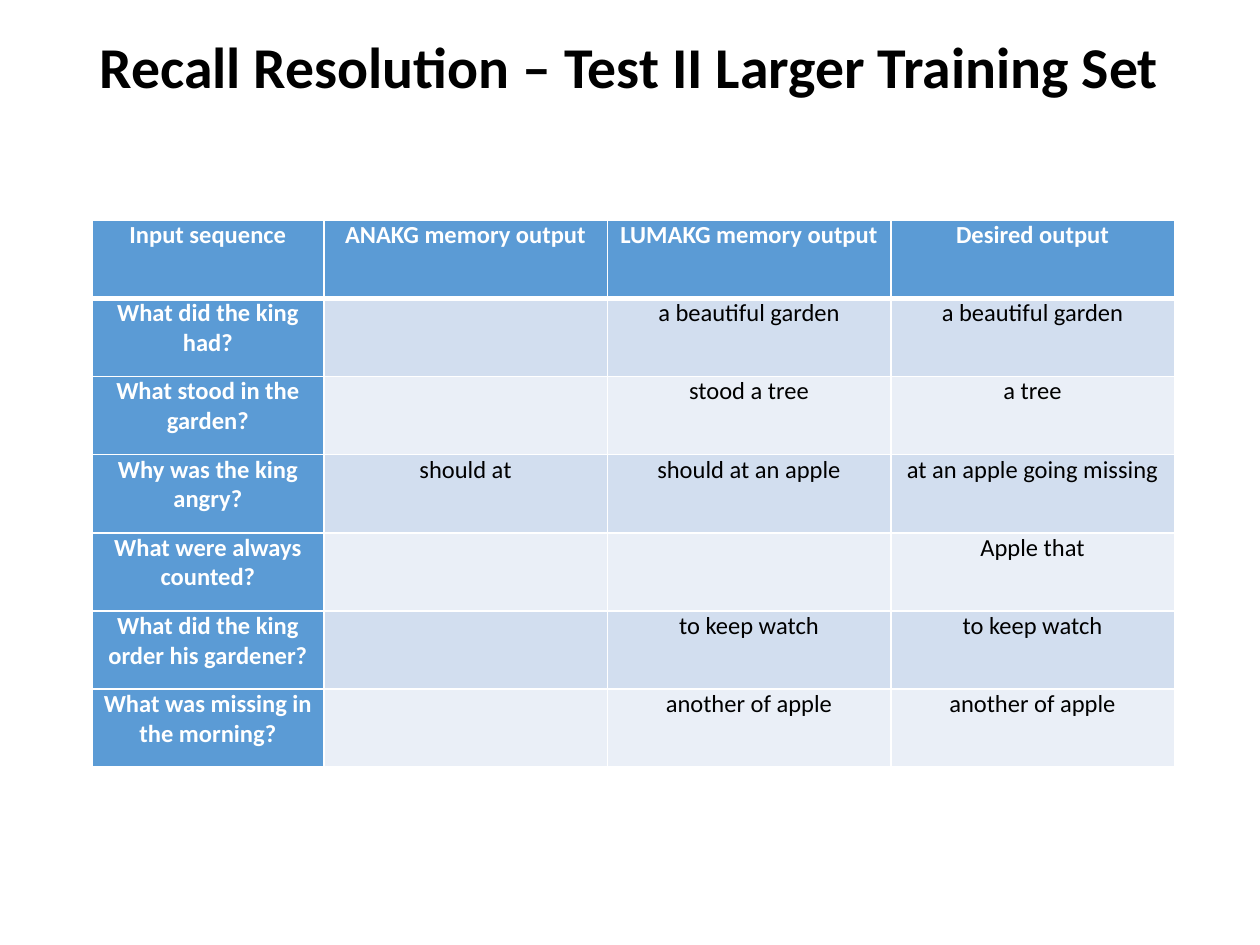
from dataclasses import dataclass

from lxml import etree
from pptx import Presentation
from pptx import util as u
from pptx.dml.color import RGBColor
from pptx.enum import text
from pptx.oxml.ns import qn


@dataclass(frozen=True)
class Theme:
    font: str = "Calibri"
    title_size: float = 33
    cell_size: float = 14
    ink: str = "000000"
    white: str = "FFFFFF"
    head: str = "5B9BD5"
    bands: tuple[str, str] = ("D2DEEF", "EAEFF7")
    line: float = 1
    head_line: float = 3


@dataclass(frozen=True)
class Recall:
    question: str
    anakg: str
    lumakg: str
    desired: str

    def cells(self) -> tuple[str, ...]:
        return self.question, self.anakg, self.lumakg, self.desired


THEME = Theme()
COLUMN_WIDTHS = (1.84, 2.25, 2.25, 2.25)
ROW_HEIGHT = 0.62
ROWS = (
    Recall("Input sequence", "ANAKG memory output", "LUMAKG memory output", "Desired output"),
    Recall("What did the king had?", "", "a beautiful garden", "a beautiful garden"),
    Recall("What stood in the garden?", "", "stood a tree", "a tree"),
    Recall("Why was the king angry?", "should at", "should at an apple",
           "at an apple going missing"),
    Recall("What were always counted?", "", "", "Apple that"),
    Recall("What did the king order his gardener?", "", "to keep watch", "to keep watch"),
    Recall("What was missing in the morning?", "", "another of apple", "another of apple"),
)


def write(tf, words: str, *, size: float, color: str, bold: bool = False,
          align=text.PP_ALIGN.LEFT, spacing: float = 1.0) -> None:
    """Put one formatted paragraph in a text frame."""
    p = tf.paragraphs[0]
    p.alignment, p.line_spacing = align, spacing
    r = p.add_run()
    r.text = words
    r.font.name, r.font.size, r.font.bold = THEME.font, u.Pt(size), bold
    r.font.color.rgb = RGBColor.from_string(color)


def add_borders(cell, top: float, bottom: float) -> None:
    """Draw white cell borders; they must precede the fill in the XML."""
    tc_pr = cell._tc.get_or_add_tcPr()
    widths = {"lnL": THEME.line, "lnR": THEME.line, "lnT": top, "lnB": bottom}
    for tag, width in widths.items():
        ln = etree.SubElement(tc_pr, qn(f"a:{tag}"), w=str(u.Pt(width)))
        fill = etree.SubElement(ln, qn("a:solidFill"))
        etree.SubElement(fill, qn("a:srgbClr"), val=THEME.white)


def draw_cell(cell, words: str, row: int, col: int) -> None:
    is_head = row == 0 or col == 0
    add_borders(cell,
                top=THEME.head_line if row == 1 else THEME.line,
                bottom=THEME.head_line if row == 0 else THEME.line)
    cell.fill.solid()
    fill = THEME.head if is_head else THEME.bands[(row - 1) % 2]
    cell.fill.fore_color.rgb = RGBColor.from_string(fill)
    cell.margin_left = cell.margin_right = u.Inches(0.07)
    cell.margin_top = cell.margin_bottom = 0
    if words:
        write(cell.text_frame, words, size=THEME.cell_size, bold=is_head,
              color=THEME.white if is_head else THEME.ink,
              align=text.PP_ALIGN.CENTER)


def draw_table(s, rows: tuple[Recall, ...]) -> None:
    frame = s.shapes.add_table(
        len(rows), len(COLUMN_WIDTHS), u.Inches(0.73), u.Inches(1.75),
        u.Inches(sum(COLUMN_WIDTHS)), u.Inches(ROW_HEIGHT * len(rows)))
    table = frame.table
    for column, width in zip(table.columns, COLUMN_WIDTHS):
        column.width = u.Inches(width)
    for i, recall in enumerate(rows):
        table.rows[i].height = u.Inches(ROW_HEIGHT)
        for j, words in enumerate(recall.cells()):
            draw_cell(table.cell(i, j), words, i, j)


def draw_title(s, words: str) -> None:
    sp = s.shapes.title
    sp.left, sp.top = u.Inches(0.69), u.Inches(-0.17)
    sp.width, sp.height = u.Inches(8.62), u.Inches(1.45)
    tf = sp.text_frame
    tf.word_wrap = True
    tf.auto_size = text.MSO_AUTO_SIZE.NONE
    tf.vertical_anchor = text.MSO_ANCHOR.MIDDLE
    tf.margin_right = 0  # room to keep the title on one line
    write(tf, words, size=THEME.title_size, color=THEME.ink, bold=True, spacing=0.9)


def main() -> None:
    prs = Presentation()
    prs.slide_width, prs.slide_height = u.Inches(10), u.Inches(7.5)
    s = prs.slides.add_slide(prs.slide_layouts[5])

    # Heading
    draw_title(s, "Recall Resolution – Test II Larger Training Set")

    # Comparison of the memory outputs
    draw_table(s, ROWS)

    prs.save("out.pptx")


if __name__ == "__main__":
    main()
